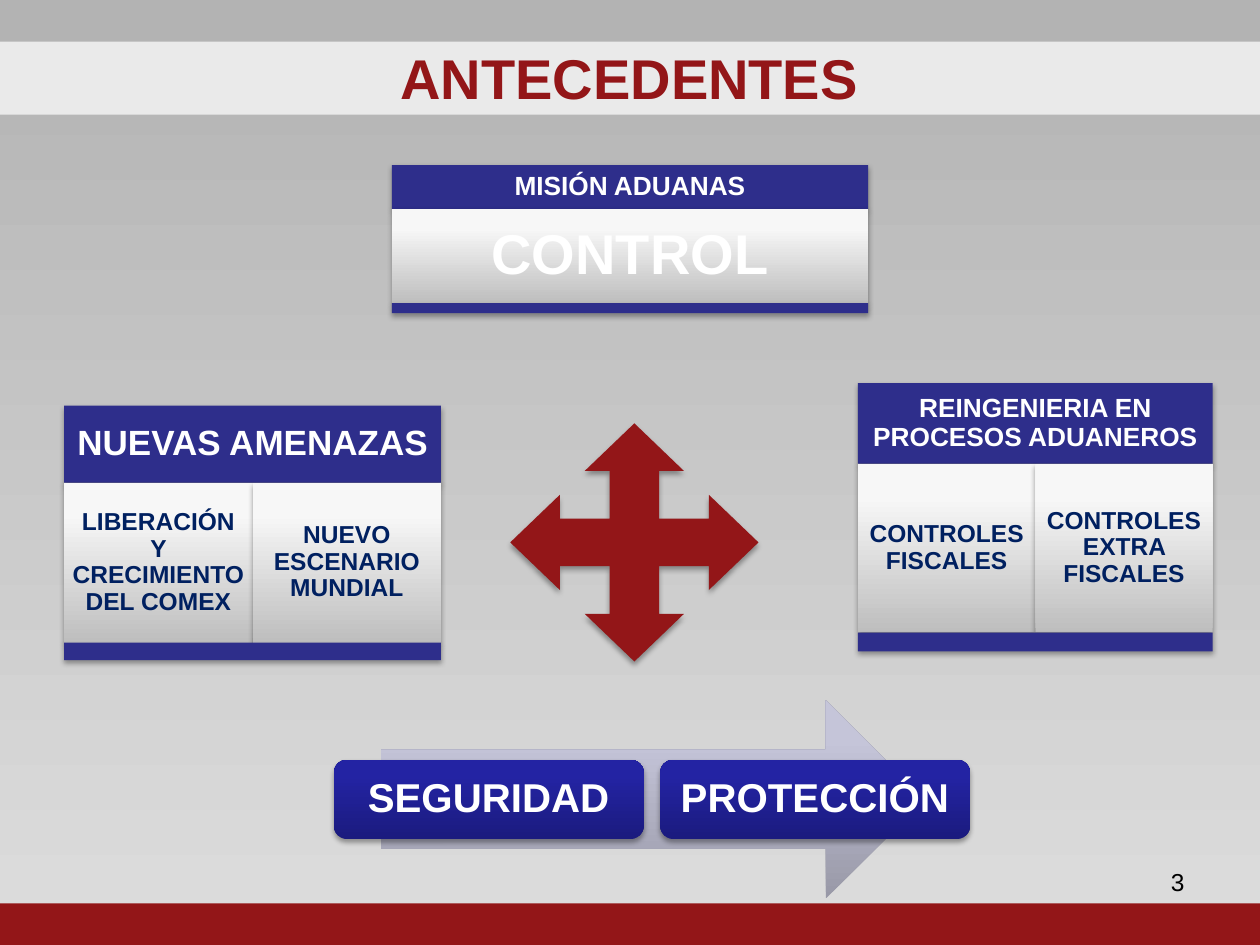
from lxml.etree import SubElement
from pptx import Presentation
from pptx.dml.color import RGBColor
from pptx.enum.shapes import MSO_SHAPE
from pptx.enum.text import MSO_ANCHOR, MSO_AUTO_SIZE, PP_ALIGN
from pptx.oxml.ns import qn
from pptx.util import Inches, Pt

THEME = {
    "font": "Arial",
    "red": "931618", "blue": "2E2E8B", "navy": "002060",
    "white": "FFFFFF", "black": "000000", "band": "EAEAEA",
    # Gradients run from the first colour to the second, which is reached at the stop
    "back": ("DDDDDD", "B3B3B3", 1),
    "silver": ("BEBEBE", "F7F7F7", 0.8),
    "royal": ("1B1B7E", "2323A3", 0.8),
    "haze": ("9898A7", "C5C5D9", 0.8),
    "title": 32, "large": 23, "head": 20, "small": 15, "cell": 14,
}

# Grid of 100 columns by 75 rows
COLS, ROWS = 100, 75
deck = Presentation()
deck.slide_width, deck.slide_height = Inches(10), Inches(7.5)
COL, ROW = deck.slide_width / COLS, deck.slide_height / ROWS
slide = deck.slides.add_slide(deck.slide_layouts[5])
shapes = slide.shapes


def write(shape, text, size, color, inset=0.6, align=PP_ALIGN.CENTER, space=0.9,
          bold=True, anchor=MSO_ANCHOR.MIDDLE):
    frame = shape.text_frame
    frame.text = text
    pad = int(inset * COL)
    style = {"word_wrap": True, "auto_size": MSO_AUTO_SIZE.NONE,
             "vertical_anchor": anchor, "margin_left": pad, "margin_right": pad,
             "margin_top": pad, "margin_bottom": pad}
    for key, value in style.items():
        setattr(frame, key, value)
    para = frame.paragraphs[0]
    para.alignment, para.line_spacing = align, space
    font = para.runs[0].font
    for key, value in {"name": THEME["font"], "size": Pt(THEME[size]), "bold": bold}.items():
        setattr(font, key, value)
    font.color.rgb = RGBColor.from_string(THEME[color])


def paint(fill, name):
    tone = THEME[name]
    if isinstance(tone, str):
        fill.solid()
        fill.fore_color.rgb = RGBColor.from_string(tone)
        return
    fill.gradient()
    fill.gradient_angle = 90
    for stop, color, place in zip(fill.gradient_stops, tone, (0, tone[2])):
        stop.color.rgb = RGBColor.from_string(color)
        stop.position = place


# Background
paint(slide.background.fill, "back")

# Plain parts: kind, place, fill, shadow
RECT, ROUND = MSO_SHAPE.RECTANGLE, MSO_SHAPE.ROUNDED_RECTANGLE
parts = [
    (RECT, (0, 3.3, COLS, 5.8), "band", False, None),
    (RECT, (0, 71.7, COLS, 3.3), "red", False, None),
    (MSO_SHAPE.RIGHT_ARROW, (30.2, 55.6, 43.2, 15.7), "haze", False, None),
]

# Two goals on the arrow
for num, goal in enumerate(("SEGURIDAD", "PROTECCIÓN")):
    parts.append((ROUND, (26.5 + num * 25.9, 60.3, 24.6, 6.3), "royal", True,
                  (goal, "large", "white", 1)))

# Panels: left, top, width, heights of head, body and foot, head, cells
panels = [
    (31.1, 13.1, 37.8, (3.5, 7.45, 0.8), ("MISIÓN ADUANAS", "small", "white", 0.6),
     ["CONTROL"], ("title", "white", 1.3)),
    (5.1, 32.2, 29.9, (6.1, 12.7, 1.4), ("NUEVAS AMENAZAS", "head", "white", 0.8),
     ["LIBERACIÓN Y CRECIMIENTO DEL COMEX", "NUEVO ESCENARIO MUNDIAL"],
     ("cell", "navy", 0.6)),
    (68.1, 30.4, 28.15, (6.4, 13.4, 1.5),
     ("REINGENIERIA EN PROCESOS ADUANEROS", "small", "white", 0.6),
     ["CONTROLES FISCALES", "CONTROLES EXTRA FISCALES"], ("cell", "navy", 0.6)),
]
for left, top, wide, (high, body, foot), head, cells, look in panels:
    parts.append((RECT, (left, top, wide, high), "blue", True, head))
    step = wide / len(cells)
    for num, text in enumerate(cells):
        parts.append((RECT, (left + num * step, top + high, step, body), "silver", True,
                      (text, *look)))
    parts.append((RECT, (left, top + high + body, wide, foot), "blue", True, None))

drawn = []
for kind, (left, top, wide, high), tone, shade, label in parts:
    shape = shapes.add_shape(kind, int(left * COL), int(top * ROW),
                             int(wide * COL), int(high * ROW))
    if label:
        write(shape, *label)
    drawn.append((shape, tone, shade))

# Four-way arrow: one quarter on a ten by ten grid, turned four times
points = [(5, 0), (3, 2), (4, 2), (4, 4), (2, 4), (2, 3)]
outline = []
for turn in range(4):
    outline += points
    points = [(y, 10 - x) for x, y in points]
pen = shapes.build_freeform(*outline[0], scale=(1.97 * COL, 1.89 * ROW))
pen.add_line_segments(outline[1:], close=True)
cross = pen.convert_to_shape(int(40.5 * COL), int(33.6 * ROW))
drawn.append((cross, "red", True))

# Fills, lines and shadows
for shape, tone, shade in drawn:
    paint(shape.fill, tone)
    shape.line.fill.background()
    shape.shadow.inherit = False
    if shade:
        effect = shape._element.spPr.find(qn("a:effectLst"))
        outer = SubElement(effect, qn("a:outerShdw"), blurRad=str(Pt(3.1)),
                           dist=str(Pt(1.8)), dir="5400000", rotWithShape="0")
        color = SubElement(outer, qn("a:srgbClr"), val=THEME["black"])
        SubElement(color, qn("a:alpha"), val="35000")

# Title, brought in front of its band
title = shapes.title
spot = {"left": 14.9 * COL, "top": 1.5 * ROW, "width": 70.1 * COL, "height": 9.3 * ROW}
for key, value in spot.items():
    setattr(title, key, int(value))
write(title, "ANTECEDENTES", "title", "red", space=1)
shapes._spTree.append(title._element)

# Page number
page = shapes.add_textbox(int(71.7 * COL), int(68.3 * ROW), int(23.3 * COL), int(5.2 * ROW))
write(page, "3", "cell", "black", inset=1, align=PP_ALIGN.RIGHT, space=1, bold=False,
      anchor=MSO_ANCHOR.TOP)
page.text_frame.margin_top = int(0.5 * ROW)

deck.save("out.pptx")
